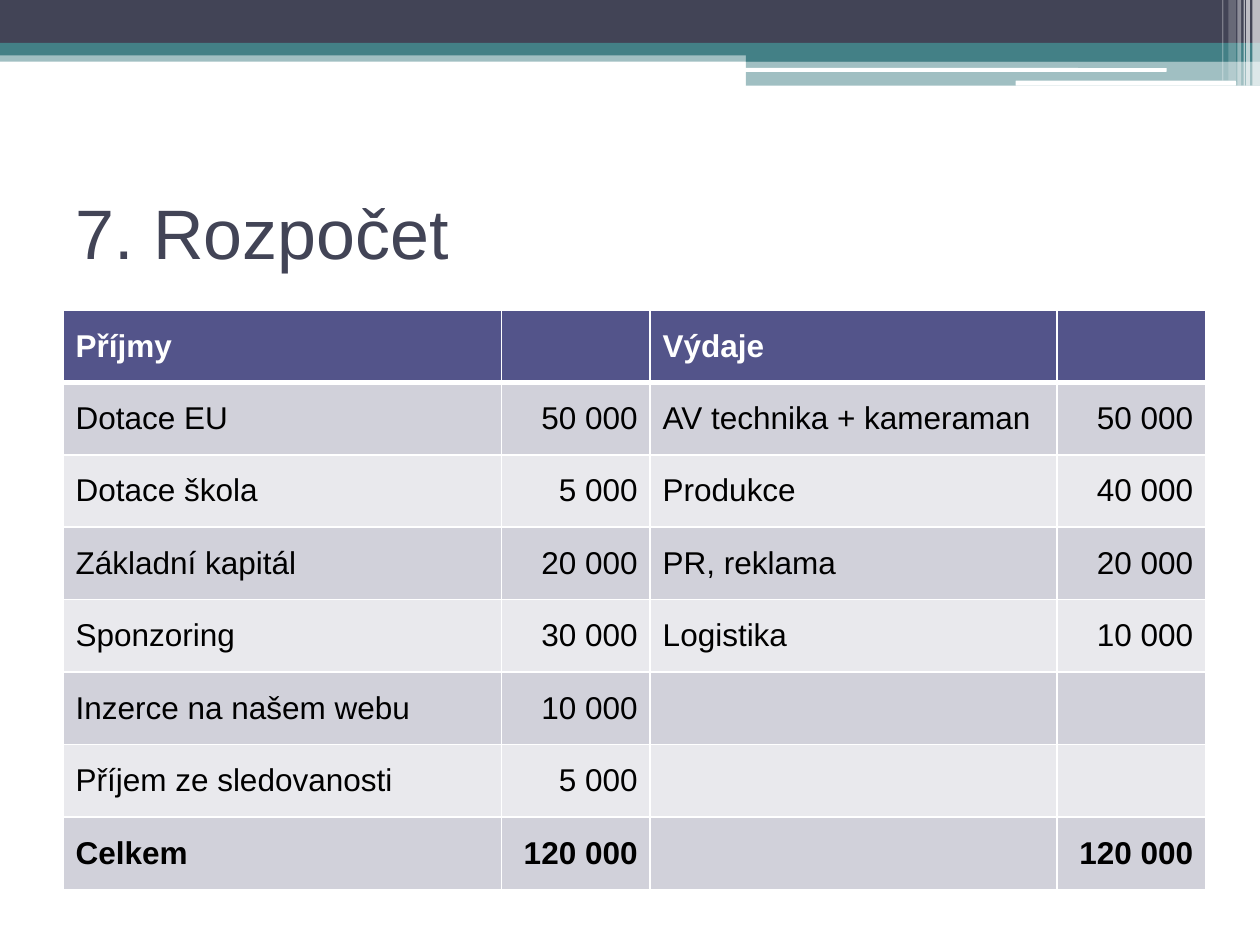
from lxml.etree import SubElement
from pptx import Presentation
from pptx.dml.color import RGBColor
from pptx.enum.shapes import MSO_SHAPE as Shape
from pptx.enum.text import MSO_ANCHOR as Anchor, PP_ALIGN as Align
from pptx.oxml import parse_xml
from pptx.oxml.ns import nsdecls, qn
from pptx.util import Inches, Pt

INK, TEAL, WHITE = "424456", "438086", "FFFFFF"
HEADER, DARK_BAND, LIGHT_BAND = "53548A", "D1D1DA", "E9E9ED"


def paint(fill, color, opacity=100):
    fill.solid()
    fill.fore_color.rgb = RGBColor.from_string(color)
    if opacity < 100:
        srgb = fill._xPr.find(".//" + qn("a:srgbClr"))
        SubElement(srgb, qn("a:alpha"), val=str(opacity * 1000))


def style(paragraph, size, color, bold=False):
    for run in paragraph.runs:
        run.font.name = "Arial"
        run.font.size = Pt(size)
        run.font.bold = bold
        run.font.color.rgb = RGBColor.from_string(color)


prs = Presentation()
prs.slide_width, prs.slide_height = Inches(10), Inches(7.5)
slide = prs.slides.add_slide(prs.slide_layouts[6])

# Header bands and the light stripes in the corner: box, colour, opacity
BAR, ROUNDED = Shape.RECTANGLE, Shape.ROUNDED_RECTANGLE
header_parts = [
    (BAR, 0, 0.4, 10, 0.09, TEAL, 50),
    (BAR, 0, 0, 10, 0.34, INK, 100),
    (BAR, 0, 0.34, 10, 0.1, TEAL, 100),
    (BAR, 5.92, 0.39, 4.08, 0.1, TEAL, 100),
    (BAR, 5.92, 0.48, 4.08, 0.2, TEAL, 50),
    (ROUNDED, 5.91, 0.54, 3.35, 0.03, WHITE, 100),
    (ROUNDED, 8.06, 0.64, 1.75, 0.04, WHITE, 100),
    (BAR, 9.94, 0, 0.06, 0.68, WHITE, 65),
    (BAR, 9.89, 0, 0.03, 0.68, WHITE, 65),
    (BAR, 9.87, 0, 0.01, 0.68, WHITE, 60),
    (BAR, 9.82, 0, 0.03, 0.68, WHITE, 40),
    (BAR, 9.75, 0, 0.06, 0.64, WHITE, 20),
    (BAR, 9.7, 0, 0.01, 0.64, WHITE, 30),
]
for kind, left, top, width, height, color, opacity in header_parts:
    band = slide.shapes.add_shape(
        kind, Inches(left), Inches(top), Inches(width), Inches(height))
    band.shadow.inherit = False
    band.line.fill.background()
    paint(band.fill, color, opacity)

# Title
title = slide.shapes.add_textbox(
    Inches(0.5), Inches(1.25), Inches(9), Inches(1.17)).text_frame
title.word_wrap = True
title.vertical_anchor = Anchor.MIDDLE
title.text = "7. Rozpočet"
style(title.paragraphs[0], 40, INK)

# Budget table: income on the left, expenses on the right
budget_rows = [
    ("Příjmy", "", "Výdaje", ""),
    ("Dotace EU", "50 000", "AV technika + kameraman", "50 000"),
    ("Dotace škola", "5 000", "Produkce", "40 000"),
    ("Základní kapitál", "20 000", "PR, reklama", "20 000"),
    ("Sponzoring", "30 000", "Logistika", "10 000"),
    ("Inzerce na našem webu", "10 000", "", ""),
    ("Příjem ze sledovanosti", "5 000", "", ""),
    ("Celkem", "120 000", "", "120 000"),
]
last = len(budget_rows) - 1
budget = slide.shapes.add_table(
    len(budget_rows), 4, Inches(0.5), Inches(2.46), Inches(9.07), Inches(4.6)).table
for column, width in zip(budget.columns, (3.48, 1.18, 3.23, 1.18)):
    column.width = Inches(width)

for r, entries in enumerate(budget_rows):
    for c, entry in enumerate(entries):
        cell = budget.cell(r, c)
        cell.text = entry
        cell.vertical_anchor = Anchor.MIDDLE
        paragraph = cell.text_frame.paragraphs[0]
        paragraph.alignment = Align.RIGHT if c % 2 else Align.LEFT
        style(paragraph, 18, WHITE if r == 0 else "000000", r in (0, last))

        # White borders, heavier under the header row
        for side in "LRTB":
            heavy = (r, side) in ((0, "B"), (1, "T"))
            cell._tc.get_or_add_tcPr().append(parse_xml(
                f'<a:ln{side} {nsdecls("a")} w="{Pt(3 if heavy else 1)}"><a:solidFill>'
                f'<a:srgbClr val="{WHITE}"/></a:solidFill></a:ln{side}>'))
        paint(cell.fill, HEADER if r == 0 else DARK_BAND if r % 2 else LIGHT_BAND)

prs.save("out.pptx")
